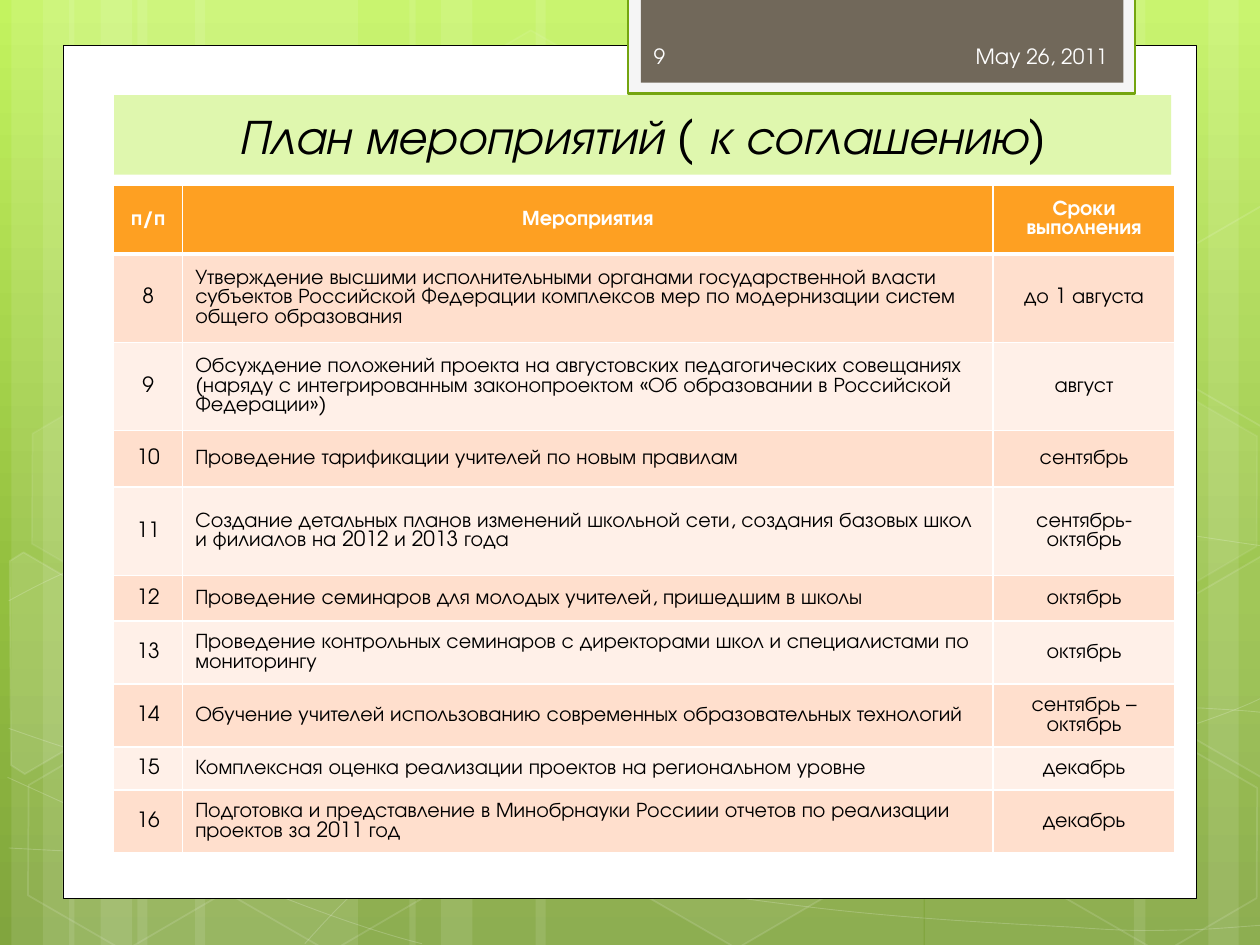
from dataclasses import dataclass
from math import cos, radians, sin
from typing import Optional

from lxml import etree
from pptx import Presentation
from pptx.dml.color import RGBColor
from pptx.enum.shapes import MSO_SHAPE
from pptx.enum.text import MSO_ANCHOR, MSO_AUTO_SIZE, PP_ALIGN
from pptx.oxml.ns import qn
from pptx.util import Pt

LEFT, CENTER, RIGHT = PP_ALIGN.LEFT, PP_ALIGN.CENTER, PP_ALIGN.RIGHT
RECTANGLE, HEXAGON = MSO_SHAPE.RECTANGLE, MSO_SHAPE.HEXAGON
MIDDLE = MSO_ANCHOR.MIDDLE
NO_AUTOFIT = MSO_AUTO_SIZE.NONE
TITLE_ONLY = 5
TILT = 30


@dataclass(frozen=True)
class Theme:
    font: str = "TeX Gyre Adventor"
    title_size: float = 28
    body_size: float = 12
    black: str = "000000"
    white: str = "FFFFFF"
    tab_text: str = "FEFEFE"
    tab_frame: str = "F5F5F5"
    tab_line: str = "74A510"
    tab: str = "71685A"
    title_fill: str = "DFF7AE"
    header: str = "FEA022"
    bands: tuple = ("FFDFCD", "FFF0E8")
    backdrop: tuple = ((0, "C3F35F"), (62, "93BF3F"), (100, "81A53E"))


@dataclass(frozen=True)
class Paint:
    fill: Optional[str] = None
    fill_alpha: int = 100
    line: Optional[str] = None
    line_width: float = 1
    line_alpha: int = 100


@dataclass(frozen=True)
class Hexagon:
    left: float
    top: float
    fill_alpha: int
    line_alpha: int


@dataclass(frozen=True)
class CutHexagon:
    outline: tuple
    center: tuple
    fill_alpha: int


@dataclass(frozen=True)
class Activity:
    number: str
    name: str
    term: str
    height: float


THEME = Theme()

# Translucent vertical stripes: (left, width)
STRIPES = (
    (78.5, 126), (6.5, 36), (24.5, 59.8),
    (111.5, 126), (39.5, 36), (57.5, 59.8),
    (528.5, 126), (690.5, 36), (648, 59.8),
    (306, 221.8), (234, 36), (252, 59.8),
)
# Start point, then segments: two controls and an end, or an end alone
CURVES = (
    ((5, 484.6), (43.9, 486.7, 82.8, 488.9, 136.8, 488.2),
     (190.8, 487.4, 257.8, 486, 329.8, 478.8), (401.8, 471.6, 504, 457.9, 570.2, 444.2),
     (635.8, 430.6, 703.4, 409, 725, 396.7)),
    ((5, 343.4), (25.9, 331.9, 46.8, 321.1, 87.1, 310.3),
     (128.2, 299.5, 186.5, 283.7, 249.8, 278.6), (313.9, 273.6, 391.7, 272.9, 470.9, 278.6),
     (550.1, 284.4, 681.8, 306.7, 725, 312.5)),
    ((4.3, 444.2), (91.4, 483.8, 177.8, 523.4, 241.2, 539.3)),
    ((5, 416.2), (27.4, 424.1, 50.4, 432, 92.2, 443.5),
     (133.9, 454.3, 196.6, 472.3, 257, 484.6), (316.8, 496.8, 392.4, 509.8, 452.2, 517),
     (511.9, 524.9, 576, 527.8, 614.2, 529.9), (652.3, 532.8, 661.7, 531.4, 680.4, 531.4),
     (699.1, 530.6, 712.1, 529.2, 725, 528.5)),
    ((174.2, 539.3), (187.2, 524.9, 200.2, 510.5, 217.4, 497.5),
     (234.7, 483.8, 259.2, 470.2, 279.4, 460.1), (299.5, 450, 311.8, 445.7, 337.7, 438.5),
     (364.3, 431.3, 412.6, 421.2, 437.8, 416.2), (463.7, 411.1, 467.3, 411.1, 489.6, 409.7),
     (511.9, 407.5, 547.2, 405.4, 571.7, 404.6), (596.9, 403.9, 637.9, 404.6, 637.9, 404.6),
     (686.2, 404.6), (699.1, 405.4, 711.4, 406.1, 717.8, 406.8),
     (724.3, 407.5, 722.2, 406.8, 724.3, 407.5)),
)
HEXAGONS = (
    Hexagon(240.5, 25.9, 4, 8), Hexagon(357.8, 424.1, 6, 12), Hexagon(7.9, 425.5, 0, 12),
    Hexagon(10.1, 224.6, 7, 8), Hexagon(125.3, 426.2, 0, 12), Hexagon(542.2, 326.2, 10, 12),
    Hexagon(600.5, 427, 0, 12), Hexagon(600.5, 226.1, 7, 8),
)
# Hexagons cut by the slide edge
LEFT_CUT = ((5.8, 320.4), (13.7, 315.4), (69.1, 347.8), (68.4, 410.4), (14.4, 442.1), (6.5, 437))
RIGHT_CUT = ((666.7, 349.2), (721.4, 317.5), (726.5, 321.1), (726.5, 441.4), (721.4, 444.2), (666.7, 412.6))
CUT_HEXAGONS = (
    CutHexagon(LEFT_CUT, (25.9, 385.9), 10),
    CutHexagon(RIGHT_CUT, (709.2, 374.4), 4),
    CutHexagon(tuple((x, y - 200.2) for x, y in RIGHT_CUT), (709.2, 173.5), 0),
)

COLUMN_WIDTHS = (39.4, 463.2, 103.9)
HEADINGS = Activity("п/п", "Мероприятия", "Сроки выполнения", 39.6)
ACTIVITIES = (
    Activity("8", "Утверждение высшими исполнительными органами государственной власти субъектов Российской Федерации комплексов мер по модернизации систем общего образования", "до 1 августа", 50.4),
    Activity("9", "Обсуждение положений проекта на августовских педагогических совещаниях (наряду с интегрированным законопроектом «Об образовании в Российской Федерации»)", "август", 50.4),
    Activity("10", "Проведение тарификации учителей по новым правилам", "сентябрь", 32.4),
    Activity("11", "Создание детальных планов изменений школьной сети, создания базовых школ и филиалов на 2012 и 2013 года", "сентябрь-октябрь", 50.4),
    Activity("12", "Проведение семинаров для молодых учителей, пришедшим в школы", "октябрь", 26.2),
    Activity("13", "Проведение контрольных семинаров с директорами школ и специалистами по мониторингу", "октябрь", 36),
    Activity("14", "Обучение учителей использованию современных образовательных технологий", "сентябрь – октябрь", 36),
    Activity("15", "Комплексная оценка реализации проектов на региональном уровне", "декабрь", 24.5),
    Activity("16", "Подготовка и представление в Минобрнауки Россиии отчетов по реализации проектов за 2011 год", "декабрь", 36),
)


def write_text(frame, text: str, *, size=THEME.body_size, color=THEME.black,
               align=LEFT, bold=False, italic=False) -> None:
    frame.word_wrap = True
    paragraph = frame.paragraphs[0]
    paragraph.alignment = align
    run = paragraph.add_run()
    run.text = text
    font = run.font
    font.name, font.size, font.bold, font.italic = THEME.font, Pt(size), bold, italic
    font.color.rgb = RGBColor.from_string(color)


def set_solid(fill, color: str, alpha: int = 100) -> None:
    fill.solid()
    fill.fore_color.rgb = RGBColor.from_string(color)
    if alpha < 100:
        color_element = fill._xPr.find(qn("a:solidFill"))[0]
        etree.SubElement(color_element, qn("a:alpha"), val=str(alpha * 1000))


def apply_paint(shape, paint: Paint) -> None:
    shape.shadow.inherit = False
    if paint.fill and paint.fill_alpha:
        set_solid(shape.fill, paint.fill, paint.fill_alpha)
    else:
        shape.fill.background()
    if paint.line:
        shape.line.width = Pt(paint.line_width)
        set_solid(shape.line.fill, paint.line, paint.line_alpha)
    else:
        shape.line.fill.background()


def draw_preset(slide, kind, box: tuple, paint: Paint):
    shape = slide.shapes.add_shape(kind, *map(Pt, box))
    apply_paint(shape, paint)
    return shape


def draw_outline(slide, points, paint: Paint, close: bool):
    (x, y), *rest = points
    builder = slide.shapes.build_freeform(Pt(x), Pt(y))
    builder.add_line_segments([(Pt(x), Pt(y)) for x, y in rest], close=close)
    shape = builder.convert_to_shape()
    apply_paint(shape, paint)
    return shape


def draw_curve(slide, curve: tuple, paint: Paint) -> None:
    shape = draw_outline(slide, [segment[-2:] for segment in curve], paint, False)
    # Bend the straight segments that have control points
    for line, segment in zip(list(shape._element.iter(qn("a:lnTo"))), curve[1:]):
        if len(segment) == 6:
            line.tag = qn("a:cubicBezTo")
            line.remove(line[0])
            for x, y in zip(segment[::2], segment[1::2]):
                etree.SubElement(line, qn("a:pt"), x=str(Pt(x) - shape.left), y=str(Pt(y) - shape.top))


def turn_back(point: tuple, center: tuple) -> tuple:
    dx, dy = point[0] - center[0], point[1] - center[1]
    c, s = cos(radians(TILT)), sin(radians(TILT))
    return center[0] + dx * c + dy * s, center[1] - dx * s + dy * c


def draw_background(slide) -> None:
    fill = slide.background.fill
    fill.gradient()
    fill.gradient_angle = 270
    stops = next(slide._element.iter(qn("a:gsLst")))
    for stop in list(stops):
        stops.remove(stop)
    for position, color in THEME.backdrop:
        stop = etree.SubElement(stops, qn("a:gs"), pos=str(position * 1000))
        etree.SubElement(stop, qn("a:srgbClr"), val=color)
    white = THEME.white
    for left, width in STRIPES:
        draw_preset(slide, RECTANGLE, (left, 0, width, 540), Paint(white, 10))
    for curve in CURVES:
        draw_curve(slide, curve, Paint(line=white, line_width=0.5, line_alpha=20))
    for item in HEXAGONS:
        shape = draw_preset(slide, HEXAGON, (item.left, item.top, 126, 109.4),
                            Paint(white, item.fill_alpha, white, 1, item.line_alpha))
        shape.adjustments[0] = 0.285
        shape.rotation = TILT
    for item in CUT_HEXAGONS:
        points = [turn_back(point, item.center) for point in item.outline]
        draw_outline(slide, points, Paint(white, item.fill_alpha, white, 1, 12), True).rotation = TILT


def set_borders(cell, bottom: float) -> None:
    properties = cell._tc.get_or_add_tcPr()
    for side, width in (("L", 1), ("R", 1), ("T", 1), ("B", bottom)):
        line = etree.SubElement(properties, qn(f"a:ln{side}"), w=str(Pt(width)))
        fill = etree.SubElement(line, qn("a:solidFill"))
        etree.SubElement(fill, qn("a:srgbClr"), val=THEME.white)


def draw_table(slide) -> None:
    rows = (HEADINGS, *ACTIVITIES)
    table = slide.shapes.add_table(len(rows), 3, Pt(65), Pt(105.6), Pt(sum(COLUMN_WIDTHS)),
                                   Pt(sum(row.height for row in rows))).table
    for column, width in zip(table.columns, COLUMN_WIDTHS):
        column.width = Pt(width)
    for index, row in enumerate(rows):
        table.rows[index].height = Pt(row.height)
        header = index == 0
        for position, text in enumerate((row.number, row.name, row.term)):
            cell = table.cell(index, position)
            set_borders(cell, 3 if header else 1)
            set_solid(cell.fill, THEME.header if header else THEME.bands[(index - 1) % 2])
            cell.vertical_anchor = MIDDLE
            write_text(cell.text_frame, text, bold=header,
                       color=THEME.white if header else THEME.black,
                       align=CENTER if header or position != 1 else LEFT)


def draw_label(slide, text: str, left: float, width: float, align) -> None:
    frame = slide.shapes.add_textbox(Pt(left), Pt(17.6), Pt(width), Pt(28.8)).text_frame
    frame.vertical_anchor = MIDDLE
    write_text(frame, text, color=THEME.tab_text, align=align)


def draw_title(slide, text: str) -> None:
    title = slide.shapes.title
    title.left, title.top, title.width, title.height = map(Pt, (65.2, 54.4, 604, 45.4))
    set_solid(title.fill, THEME.title_fill)
    title.text_frame.auto_size = NO_AUTOFIT
    title.text_frame.vertical_anchor = MIDDLE
    write_text(title.text_frame, text, size=THEME.title_size, align=CENTER, italic=True)
    slide.shapes._spTree.append(title._element)  # bring to front


def main() -> None:
    presentation = Presentation()
    presentation.slide_width, presentation.slide_height = Pt(720), Pt(540)
    slide = presentation.slides.add_slide(presentation.slide_layouts[TITLE_ONLY])
    draw_background(slide)
    # White page and the tab at its top
    draw_preset(slide, RECTANGLE, (36, 25.9, 648, 487.4), Paint(THEME.white, line=THEME.black, line_width=0.5))
    draw_preset(slide, RECTANGLE, (359, -1.7, 289.8, 55.2), Paint(THEME.tab_frame, line=THEME.tab_line, line_width=1.25))
    draw_preset(slide, RECTANGLE, (366.2, -1.7, 275.8, 49), Paint(THEME.tab))
    draw_table(slide)
    draw_title(slide, "План мероприятий ( к соглашению)")
    draw_label(slide, "May 26, 2011", 472.3, 167.8, RIGHT)
    draw_label(slide, "9", 366.5, 105.1, LEFT)
    presentation.save("out.pptx")


if __name__ == "__main__":
    main()
